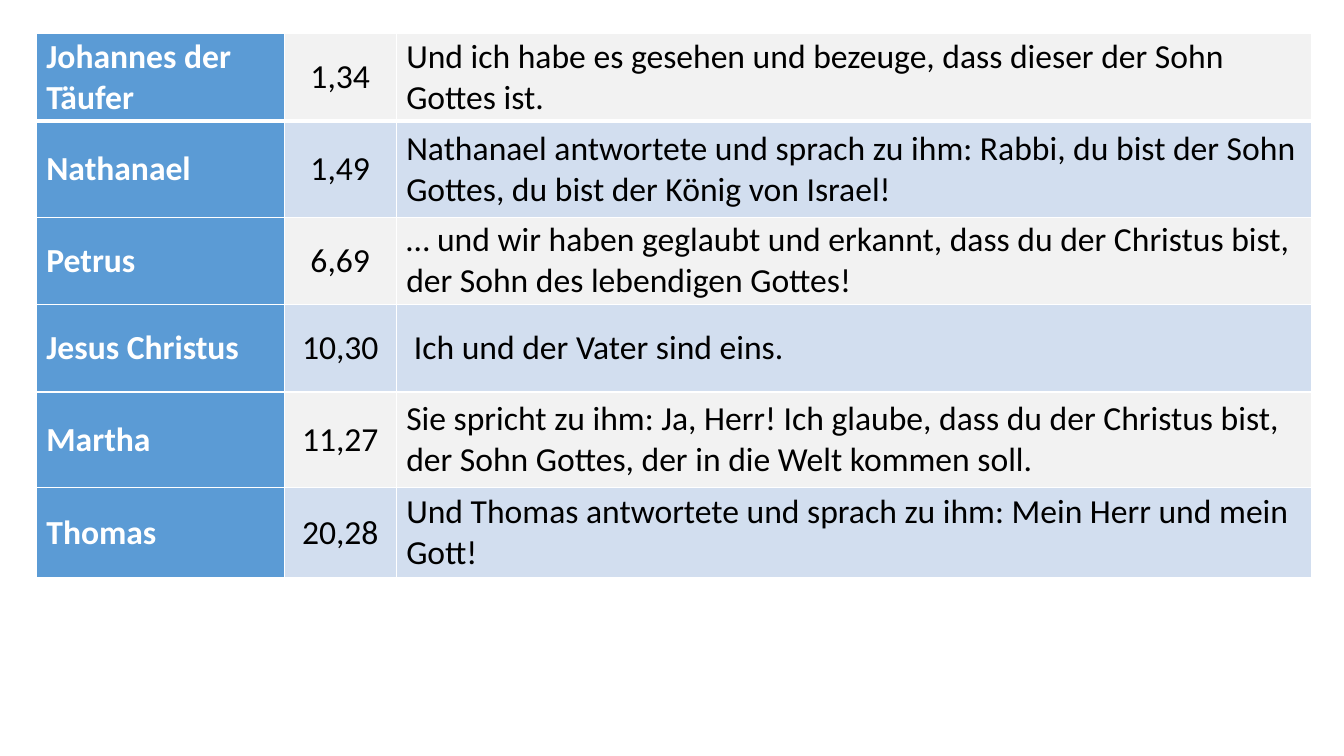
from pptx import Presentation
from pptx.dml.color import RGBColor
from pptx.enum.text import MSO_ANCHOR as Anchor, PP_ALIGN as Align
from pptx.oxml import parse_xml
from pptx.oxml.ns import nsdecls
from pptx.util import Inches, Pt

WIDTHS = [2.46, 1.11, 9.08]
HEIGHTS = [0.87, 0.96, 0.86, 0.87, 0.95, 0.89]
VERSES = [
    ("Johannes der Täufer", "1,34",
     "Und ich habe es gesehen und bezeuge, dass dieser der Sohn Gottes ist."),
    ("Nathanael", "1,49",
     "Nathanael antwortete und sprach zu ihm: Rabbi, du bist der Sohn Gottes, "
     "du bist der König von Israel!"),
    ("Petrus", "6,69",
     "… und wir haben geglaubt und erkannt, dass du der Christus bist, "
     "der Sohn des lebendigen Gottes!"),
    ("Jesus Christus", "10,30", " Ich und der Vater sind eins."),
    ("Martha", "11,27",
     "Sie spricht zu ihm: Ja, Herr! Ich glaube, dass du der Christus bist, "
     "der Sohn Gottes, der in die Welt kommen soll."),
    ("Thomas", "20,28",
     "Und Thomas antwortete und sprach zu ihm: Mein Herr und mein Gott!"),
]


def color(text):
    return RGBColor.from_string(text)


class Deck:
    font = {"name": "Calibri", "size": Pt(24)}
    cell = {"vertical_anchor": Anchor.MIDDLE,
            "margin_left": Inches(0.1), "margin_right": Inches(0.1),
            "margin_top": 0, "margin_bottom": 0}
    line = "FFFFFF"
    name = {"fill": "5B9BD5", "ink": "FFFFFF", "bold": True}
    bands = ["F2F2F2", "D2DEEF"]

    def __init__(self):
        self.show = Presentation()
        self.show.slide_width = Inches(13.33)
        self.show.slide_height = Inches(7.5)
        self.slide = self.show.slides.add_slide(self.show.slide_layouts[6])

    def table(self, left, top, widths, heights, rows):
        frame = self.slide.shapes.add_table(
            len(rows), len(widths), Inches(left), Inches(top),
            Inches(sum(widths)), Inches(sum(heights)))
        grid = frame.table
        for col, width in zip(grid.columns, widths):
            col.width = Inches(width)
        for row, height in zip(grid.rows, heights):
            row.height = Inches(height)
        for r, row in enumerate(rows):
            body = {"fill": self.bands[r % 2], "ink": "000000", "bold": False}
            for c, text in enumerate(row):
                cell = grid.cell(r, c)
                self.label(cell, text, body if c else self.name,
                           Align.CENTER if c == 1 else Align.LEFT)
                # The first row is set off by a thicker rule.
                self.border(cell, L=1, R=1, T=3 if r == 1 else 1,
                            B=3 if r == 0 else 1)

    def label(self, cell, text, look, align):
        """Fill a table cell and set its styled text."""
        for key, value in self.cell.items():
            setattr(cell, key, value)
        cell.fill.solid()
        cell.fill.fore_color.rgb = color(look["fill"])
        para = cell.text_frame.paragraphs[0]
        para.alignment = align
        run = para.add_run()
        run.text = text
        for key, value in {**self.font, "bold": look["bold"]}.items():
            setattr(run.font, key, value)
        run.font.color.rgb = color(look["ink"])

    def border(self, cell, **sides):
        """Draw cell borders, given as side letter and width in points."""
        props = cell._tc.get_or_add_tcPr()
        for spot, (side, width) in enumerate(sides.items()):
            props.insert(spot, parse_xml(
                f'<a:ln{side} {nsdecls("a")} w="{Pt(width)}"><a:solidFill>'
                f'<a:srgbClr val="{self.line}"/></a:solidFill></a:ln{side}>'))


def main():
    deck = Deck()
    deck.table(0.36, 0.33, WIDTHS, HEIGHTS, VERSES)
    deck.show.save("out.pptx")


if __name__ == "__main__":
    main()
